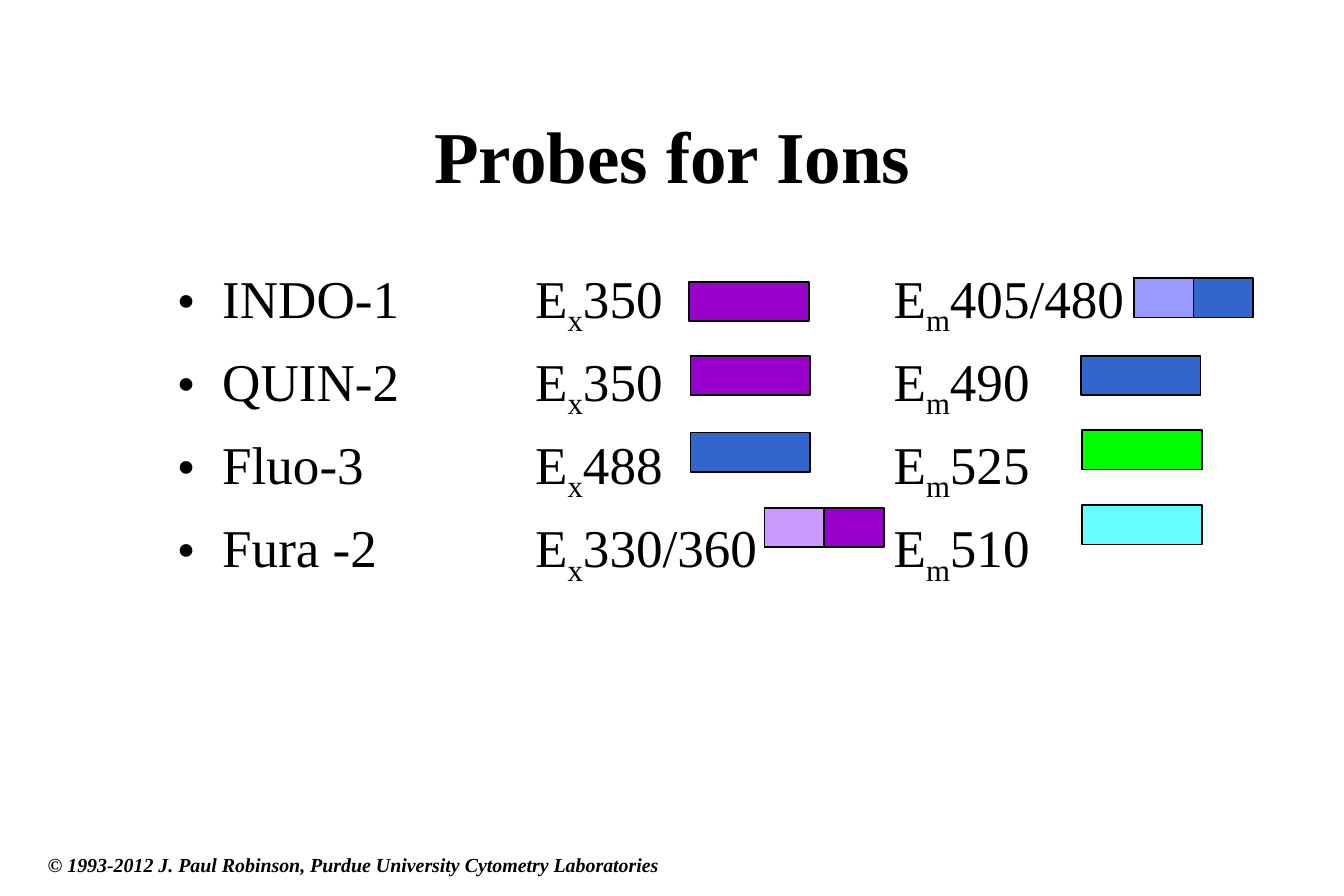
import lxml.etree
import pptx
import pptx.dml.color
import pptx.enum.shapes
import pptx.enum.text
import pptx.oxml
import pptx.oxml.ns
import pptx.util

Inches = pptx.util.Inches
Pt = pptx.util.Pt

PROBES = [
    ("INDO-1", "350", "405/480"),
    ("QUIN-2", "350", "490"),
    ("Fluo-3", "488", "525"),
    ("Fura -2", "330/360", "510"),
]
VIOLET, BLUE = "9900CC", "3366CC"
EXCITATION_SWATCHES = [
    (5.77, 2.36, VIOLET, None),
    (5.78, 2.98, VIOLET, None),
    (5.78, 3.62, BLUE, None),
    (6.4, 4.25, VIOLET, "CC99FF"),
]
EMISSION_SWATCHES = [
    (9.49, 2.33, BLUE, "9999FF"),
    (9.05, 2.98, BLUE, None),
    (9.06, 3.6, "00FF00", None),
    (9.06, 4.23, "66FFFF", None),
]


def color(value):
    return pptx.dml.color.RGBColor.from_string(value)


class ProbeSlide:
    font_name = "Times New Roman"
    ink = "000000"
    columns = (3, 6)

    def __init__(self, presentation):
        layout = presentation.slide_layouts[1]
        self.slide = presentation.slides.add_slide(layout)

    def style(self, paragraph, size, bold=False, italic=False):
        font = paragraph.font
        font.name, font.size = self.font_name, Pt(size)
        font.bold, font.italic = bold, italic
        font.color.rgb = color(self.ink)

    def place(self, shape, left, top, width, height):
        shape.left, shape.top = Inches(left), Inches(top)
        shape.width, shape.height = Inches(width), Inches(height)
        shape.text_frame.auto_size = pptx.enum.text.MSO_AUTO_SIZE.NONE

    def title(self, text):
        shape = self.slide.shapes.title
        self.place(shape, 1.38, 0.67, 8.5, 1.25)
        shape.text_frame.text = text
        shape.text_frame.vertical_anchor = pptx.enum.text.MSO_ANCHOR.MIDDLE
        paragraph = shape.text_frame.paragraphs[0]
        paragraph.alignment = pptx.enum.text.PP_ALIGN.CENTER
        self.style(paragraph, 44, bold=True)

    def bullet(self, paragraph):
        properties = paragraph._p.get_or_add_pPr()
        properties.set("marL", str(Inches(0.38)))
        properties.set("indent", str(Inches(-0.38)))
        qn = pptx.oxml.ns.qn
        lxml.etree.SubElement(properties, qn("a:buFont"), typeface=self.font_name)
        lxml.etree.SubElement(properties, qn("a:buChar"), char="•")
        tabs = lxml.etree.SubElement(properties, qn("a:tabLst"))
        for column in self.columns:
            lxml.etree.SubElement(tabs, qn("a:tab"), pos=str(Inches(column)), algn="l")

    def probe_list(self, probes):
        shape = self.slide.placeholders[1]
        self.place(shape, 1.38, 2.17, 8.5, 4.5)
        frame = shape.text_frame
        for index, (name, excitation, emission) in enumerate(probes):
            paragraph = frame.add_paragraph() if index else frame.paragraphs[0]
            self.bullet(paragraph)
            paragraph.space_before = Pt(6.4 if index else 0)
            self.style(paragraph, 32)
            pieces = (f"{name}\tE", "x", f"{excitation}\tE", "m", emission)
            for piece in pieces:
                run = paragraph.add_run()
                run.text = piece
                if piece in ("x", "m"):
                    run._r.get_or_add_rPr().set("baseline", "-25000")

    def rectangle(self, left, top, width, fill):
        shape = self.slide.shapes.add_shape(
            pptx.enum.shapes.MSO_SHAPE.RECTANGLE,
            Inches(left), Inches(top), Inches(width), Inches(0.33))
        shape.shadow.inherit = False
        shape.fill.solid()
        shape.fill.fore_color.rgb = color(fill)
        shape.line.color.rgb = color(self.ink)
        shape.line.width = Pt(1)

    def swatch(self, left, top, fill, first_half):
        self.rectangle(left, top, 1, fill)
        if first_half:
            self.rectangle(left, top, 0.5, first_half)

    def copyright(self, text):
        shape = self.slide.shapes.add_textbox(0, 0, 0, 0)
        self.place(shape, 0.3, 7.09, 5.5, 0.3)
        shape.text_frame.word_wrap = False
        shape.text_frame.text = text
        self.style(shape.text_frame.paragraphs[0], 12, bold=True, italic=True)


def main():
    presentation = pptx.Presentation()
    presentation.slide_width = Inches(11.25)
    presentation.slide_height = Inches(7.5)
    slide = ProbeSlide(presentation)
    slide.copyright("© 1993-2012 J. Paul Robinson, Purdue University Cytometry Laboratories")
    slide.title("Probes for Ions")
    slide.probe_list(PROBES)
    for swatch in EXCITATION_SWATCHES + EMISSION_SWATCHES:
        slide.swatch(*swatch)
    presentation.save("out.pptx")


if __name__ == "__main__":
    main()
